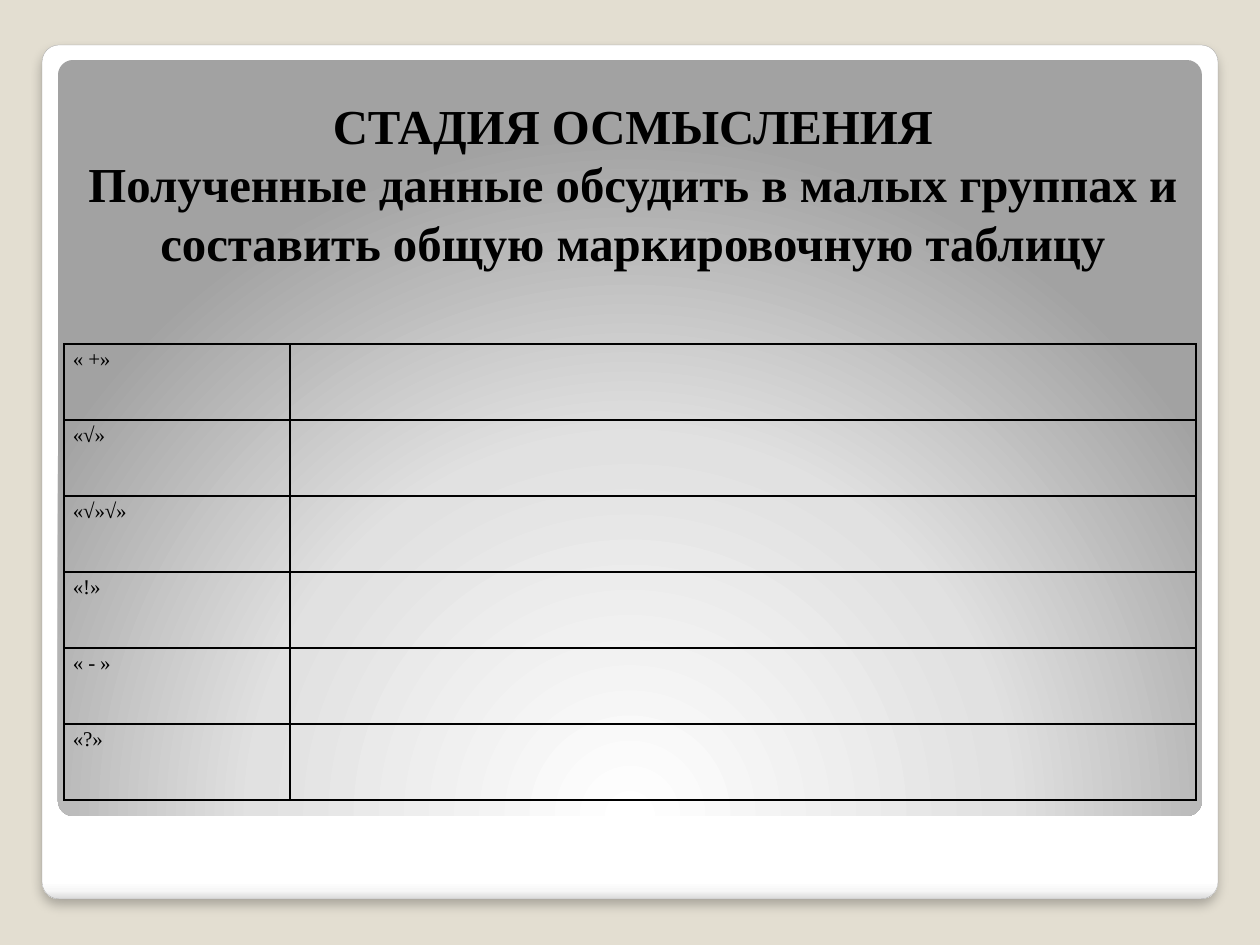
from dataclasses import dataclass

from pptx import Presentation
from pptx.dml.color import RGBColor
from pptx.enum.shapes import MSO_SHAPE
from pptx.enum.text import MSO_ANCHOR, PP_ALIGN
from pptx.oxml import parse_xml
from pptx.oxml.ns import nsdecls
from pptx.util import Emu, Pt

ROUND = MSO_SHAPE.ROUNDED_RECTANGLE
BOTTOM = MSO_ANCHOR.BOTTOM
CENTER, JUSTIFY = PP_ALIGN.CENTER, PP_ALIGN.JUSTIFY
FONT = "Times New Roman"
BLACK = "000000"
NS = nsdecls("a")

TITLE = (
    "СТАДИЯ ОСМЫСЛЕНИЯ",
    "Полученные данные обсудить в малых группах и составить общую маркировочную таблицу",
)
MARKS = ("« +»", "«√»", "«√»√»", "«!»", "« - »", "«?»")
COLS = (226, 906)
ROW = 76

DOWN = '<a:lin ang="5400000" scaled="0"/>'
GLOW = '<a:path path="circle"><a:fillToRect l="50000" t="175000" r="50000" b="-75000"/></a:path>'
SHADE = (
    f'<a:effectLst {NS}><a:outerShdw blurRad="76200" dist="50800" dir="5400000" algn="tl" '
    f'rotWithShape="0"><a:srgbClr val="{BLACK}"><a:alpha val="25000"/></a:srgbClr>'
    "</a:outerShdw></a:effectLst>"
)


@dataclass
class Panel:
    box: tuple[int, int, int, int]
    stops: tuple[tuple[int, str], ...]
    flow: str
    edge: str = ""
    shade: bool = False


PANELS = (
    Panel((42, 45, 1176, 854),
          ((0, "FFFFFF"), (98, "FFFFFF"), (99, "F7F7F7"), (100, "DADADA")),
          DOWN, "A4A4A4", True),
    Panel((58, 60, 1144, 756),
          ((0, "FFFFFF"), (55, "E1E1E1"), (100, "A2A2A2")), GLOW),
)


def px(n: int) -> Emu:
    return Emu(round(n * 914400 / 126))


def color(code: str) -> RGBColor:
    return RGBColor.from_string(code)


def add_run(para, text: str, size: float, bold: bool = False):
    run = para.add_run()
    run.text = text
    run.font.name = FONT
    run.font.size = Pt(size)
    run.font.bold = bold
    run.font.color.rgb = color(BLACK)
    return run


def add_panel(slide, panel: Panel) -> None:
    shape = slide.shapes.add_shape(ROUND, *map(px, panel.box))
    shape.adjustments[0] = 0.02
    shape.shadow.inherit = False
    if panel.edge:
        shape.line.color.rgb = color(panel.edge)
        shape.line.width = Pt(0.16)
    else:
        shape.line.fill.background()
    stops = "".join(
        f'<a:gs pos="{pos * 1000}"><a:srgbClr val="{code}"/></a:gs>'
        for pos, code in panel.stops
    )
    props = shape.element.spPr
    grad = f'<a:gradFill {NS} rotWithShape="1"><a:gsLst>{stops}</a:gsLst>{panel.flow}</a:gradFill>'
    props.insert(2, parse_xml(grad))
    if panel.shade:
        props.replace(props[-1], parse_xml(SHADE))


def add_title(slide) -> None:
    frame = slide.shapes.add_textbox(*map(px, (69, 66, 1128, 277))).text_frame
    frame.word_wrap = True
    frame.vertical_anchor = BOTTOM
    frame.margin_bottom = px(72)
    para = frame.paragraphs[0]
    para.alignment = CENTER
    para.line_spacing = Pt(33.4)
    head, body = TITLE
    add_run(para, head, 27.9, True)
    para.add_line_break()
    add_run(para, body, 27.9, True)


def style_cell(cell) -> None:
    """Give the cell black borders and no fill."""
    props = cell._tc.get_or_add_tcPr()
    for side in "LRTB":
        props.append(parse_xml(
            f'<a:ln{side} {NS} w="12700"><a:solidFill><a:srgbClr val="{BLACK}"/>'
            f"</a:solidFill></a:ln{side}>"
        ))
    cell.fill.background()
    cell.margin_left = cell.margin_right = px(9)
    cell.margin_top = cell.margin_bottom = 0


def add_marks(slide) -> None:
    table = slide.shapes.add_table(
        len(MARKS), len(COLS), px(64), px(344), px(sum(COLS)), px(ROW * len(MARKS))
    ).table
    table.first_row = table.horz_banding = False
    for col, width in zip(table.columns, COLS):
        col.width = px(width)
    for row, mark in zip(table.rows, MARKS):
        row.height = px(ROW)
        for cell in row.cells:
            style_cell(cell)
        para = row.cells[0].text_frame.paragraphs[0]
        para.alignment = JUSTIFY
        para.line_spacing = 1.15
        run = add_run(para, mark, 12)
        run.font._element.set("spc", "-10")


def main() -> None:
    deck = Presentation()
    deck.slide_width, deck.slide_height = px(1260), px(945)
    slide = deck.slides.add_slide(deck.slide_layouts[6])
    back = slide.background.fill
    back.solid()
    back.fore_color.rgb = color("E3DED1")
    for panel in PANELS:
        add_panel(slide, panel)
    add_title(slide)
    add_marks(slide)
    deck.save("out.pptx")


if __name__ == "__main__":
    main()
